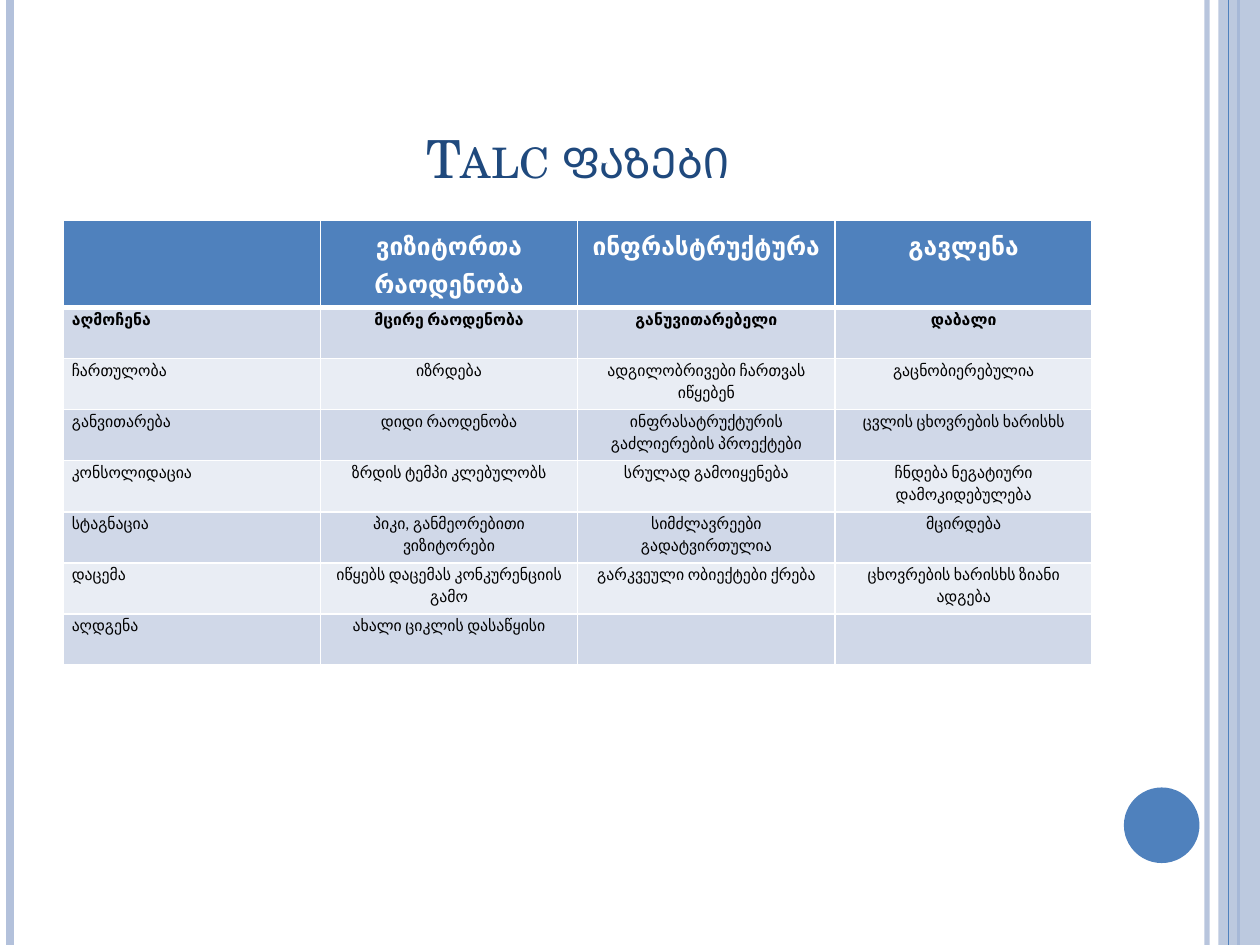
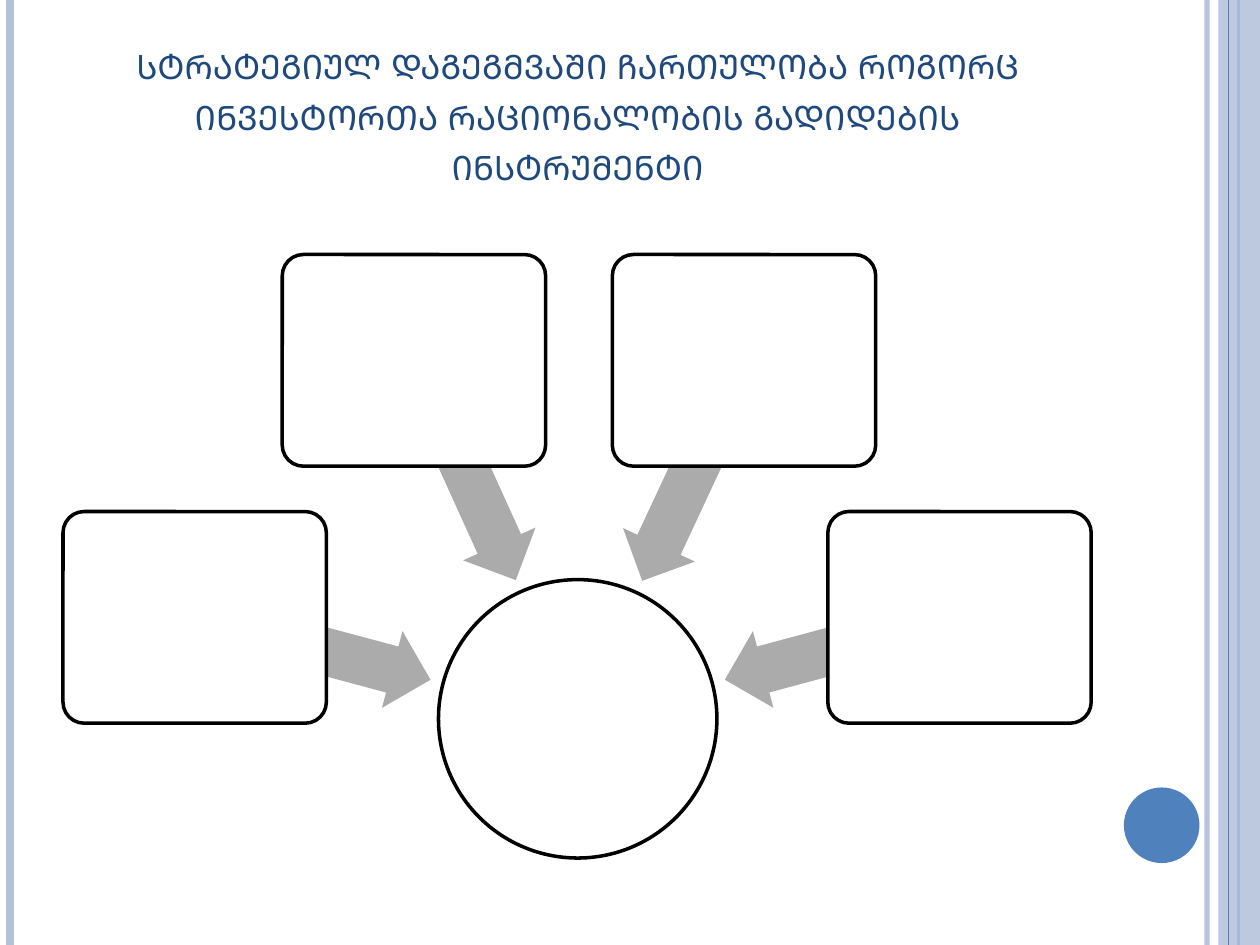
from typing import NamedTuple

from lxml.etree import SubElement
from pptx import Presentation
from pptx.dml.color import RGBColor
from pptx.enum.shapes import MSO_CONNECTOR as Connector
from pptx.enum.shapes import MSO_SHAPE as Shape
from pptx.enum.text import MSO_ANCHOR as Anchor
from pptx.enum.text import PP_ALIGN as Align
from pptx.oxml.ns import qn
from pptx.util import Inches, Pt

COLORS = {
    "white": "FFFFFF",
    "black": "000000",
    "navy": "1F497D",
    "blue": "4F81BD",
    "pale": "B3C1DB",
    "gray": "ABABAB",
    "odd_row": "D0D8E8",
    "even_row": "E9EDF4",
}
SERIF, SANS = "TeX Gyre Schola", "Calibri"
SLIDE_W, SLIDE_H = 10, 7.5
CONTENT_LEFT, CONTENT_W = 0.5, 8.17
HEADER_H, PHASES_H = 0.69, 2.84
CARD_W, CARD_H = 2.09, 1.68
ARROW_W, ARROW_H = 1.93, 0.63


class Rule(NamedTuple):
    x: float
    color: str
    width: float
    alpha: int = 100


class Branch(NamedTuple):
    card_x: float
    card_y: float
    arrow_x: float
    arrow_y: float
    angle: float


RULES_BELOW = [
    Rule(9.58, "pale", 3, 93),
    Rule(0.08, "pale", 4.5),
    Rule(9.83, "blue", 1.5),
]
RULE_ABOVE = Rule(9.75, "blue", 0.75)

HEADER = ["", "ვიზიტორთა რაოდენობა", "ინფრასტრუქტურა", "გავლენა"]
PHASES = [
    ["აღმოჩენა", "მცირე რაოდენობა", "განუვითარებელი", "დაბალი"],
    ["ჩართულობა", "იზრდება", "ადგილობრივები ჩართვას იწყებენ", "გაცნობიერებულია"],
    ["განვითარება", "დიდი რაოდენობა", "ინფრასატრუქტურის გაძლიერების პროექტები",
     "ცვლის ცხოვრების ხარისხს"],
    ["კონსოლიდაცია", "ზრდის ტემპი კლებულობს", "სრულად გამოიყენება",
     "ჩნდება ნეგატიური დამოკიდებულება"],
    ["სტაგნაცია", "პიკი, განმეორებითი ვიზიტორები", "სიმძლავრეები გადატვირთულია",
     "მცირდება"],
    ["დაცემა", "იწყებს დაცემას კონკურენციის გამო", "გარკვეული ობიექტები ქრება",
     "ცხოვრების ხარისხს ზიანი ადგება"],
    ["აღდგენა", "ახალი ციკლის დასაწყისი", "", ""],
]
BRANCHES = [
    Branch(0.5, 4.06, 1.52, 4.83, 195),
    Branch(2.24, 2.02, 2.73, 3.41, 245.6),
    Branch(4.86, 2.02, 4.54, 3.42, 295),
    Branch(6.57, 4.06, 5.72, 4.83, 345),
]


def rgb(name: str) -> RGBColor:
    return RGBColor.from_string(COLORS[name])


def set_alpha(element, percent: int) -> None:
    if percent < 100:
        color = next(element.iter(qn("a:srgbClr")))
        SubElement(color, qn("a:alpha")).set("val", str(percent * 1000))


def add_rule(s, rule: Rule) -> None:
    x = Inches(rule.x)
    line = s.shapes.add_connector(Connector.STRAIGHT, x, 0, x, Inches(SLIDE_H))
    line.line.color.rgb = rgb(rule.color)
    line.line.width = Pt(rule.width)
    set_alpha(line._element.spPr, rule.alpha)
    SubElement(line._element.spPr, qn("a:effectLst"))


def add_filled(s, kind, x: float, y: float, w: float, h: float, fill: str,
               outline: float = 0, alpha: int = 100):
    sp = s.shapes.add_shape(kind, Inches(x), Inches(y), Inches(w), Inches(h))
    sp.shadow.inherit = False
    sp.fill.solid()
    sp.fill.fore_color.rgb = rgb(fill)
    set_alpha(sp._element.spPr, alpha)
    if outline:
        sp.line.color.rgb = rgb("black")
        sp.line.width = Pt(outline)
    else:
        sp.line.fill.background()
    return sp


def style_font(font, name: str, size: float, color: str, bold: bool = False) -> None:
    font.name = name
    font.size = Pt(size)
    font.bold = bold
    font.color.rgb = rgb(color)


def add_title(s, text: str, size: float) -> None:
    box = s.shapes.add_textbox(Inches(CONTENT_LEFT), Inches(0.3),
                               Inches(CONTENT_W), Inches(1.25))
    tf = box.text_frame
    tf.word_wrap = True
    tf.vertical_anchor = Anchor.BOTTOM
    p = tf.paragraphs[0]
    p.alignment = Align.CENTER
    style_font(p.font, SERIF, size, "navy")
    r = p.add_run()
    r.text = text
    r._r.get_or_add_rPr().set("cap", "small")


def new_slide(prs, title: str, size: float):
    s = prs.slides.add_slide(prs.slide_layouts[6])
    for rule in RULES_BELOW:
        add_rule(s, rule)
    add_filled(s, Shape.RECTANGLE, 9.67, 0, 0.33, SLIDE_H, "pale", alpha=87)
    add_rule(s, RULE_ABOVE)
    add_filled(s, Shape.OVAL, 8.92, 6.25, 0.6, 0.6, "blue")
    add_title(s, title, size)
    return s


def set_borders(cell, top: float, bottom: float) -> None:
    tc_pr = cell._tc.get_or_add_tcPr()
    widths = {"a:lnL": 1, "a:lnR": 1, "a:lnT": top, "a:lnB": bottom}
    for i, (tag, width) in enumerate(widths.items()):
        ln = tc_pr.makeelement(qn(tag), {"w": str(Pt(width))})
        fill = SubElement(ln, qn("a:solidFill"))
        SubElement(fill, qn("a:srgbClr")).set("val", COLORS["white"])
        tc_pr.insert(i, ln)


def fill_cell(cell, text: str, row: int, col: int) -> None:
    cell.fill.solid()
    p = cell.text_frame.paragraphs[0]
    p.text = text
    if row == 0:
        cell.fill.fore_color.rgb = rgb("blue")
        style_font(p.font, SERIF, 14, "white", True)
    else:
        cell.fill.fore_color.rgb = rgb("odd_row" if row % 2 else "even_row")
        cell.margin_left = cell.margin_right = Inches(0.07)
        cell.margin_top = cell.margin_bottom = 0
        p.line_spacing = 1.15
        style_font(p.font, SANS, 9, "black", row == 1)
    p.alignment = Align.CENTER if row == 0 or col else Align.LEFT
    set_borders(cell, 3 if row == 1 else 1, 3 if row == 0 else 1)


def build_phases(prs) -> None:
    s = new_slide(prs, "Talc ფაზები", 30)
    rows = [HEADER, *PHASES]
    table = s.shapes.add_table(len(rows), len(HEADER), Inches(CONTENT_LEFT), Inches(1.75),
                               Inches(CONTENT_W), Inches(HEADER_H + PHASES_H)).table
    table.horz_banding = False
    for i, texts in enumerate(rows):
        table.rows[i].height = Inches(PHASES_H / len(PHASES) if i else HEADER_H)
        for j, text in enumerate(texts):
            fill_cell(table.cell(i, j), text, i, j)


def build_involvement(prs) -> None:
    s = new_slide(prs, "სტრატეგიულ დაგეგმვაში ჩართულობა როგორც ინვესტორთა "
                       "რაციონალობის გადიდების ინსტრუმენტი", 24)
    add_filled(s, Shape.OVAL, 3.48, 4.6, 2.21, 2.21, "white", 2)
    for b in BRANCHES:
        arrow = add_filled(s, Shape.LEFT_ARROW, b.arrow_x, b.arrow_y,
                           ARROW_W, ARROW_H, "gray")
        arrow.adjustments[0] = 0.6
        arrow.adjustments[1] = 0.5
        arrow.rotation = b.angle
        card = add_filled(s, Shape.ROUNDED_RECTANGLE, b.card_x, b.card_y,
                          CARD_W, CARD_H, "white", 2)
        card.adjustments[0] = 0.1


def main() -> None:
    prs = Presentation()
    prs.slide_width = Inches(SLIDE_W)
    prs.slide_height = Inches(SLIDE_H)
    build_phases(prs)
    build_involvement(prs)
    prs.save("out.pptx")


if __name__ == "__main__":
    main()
